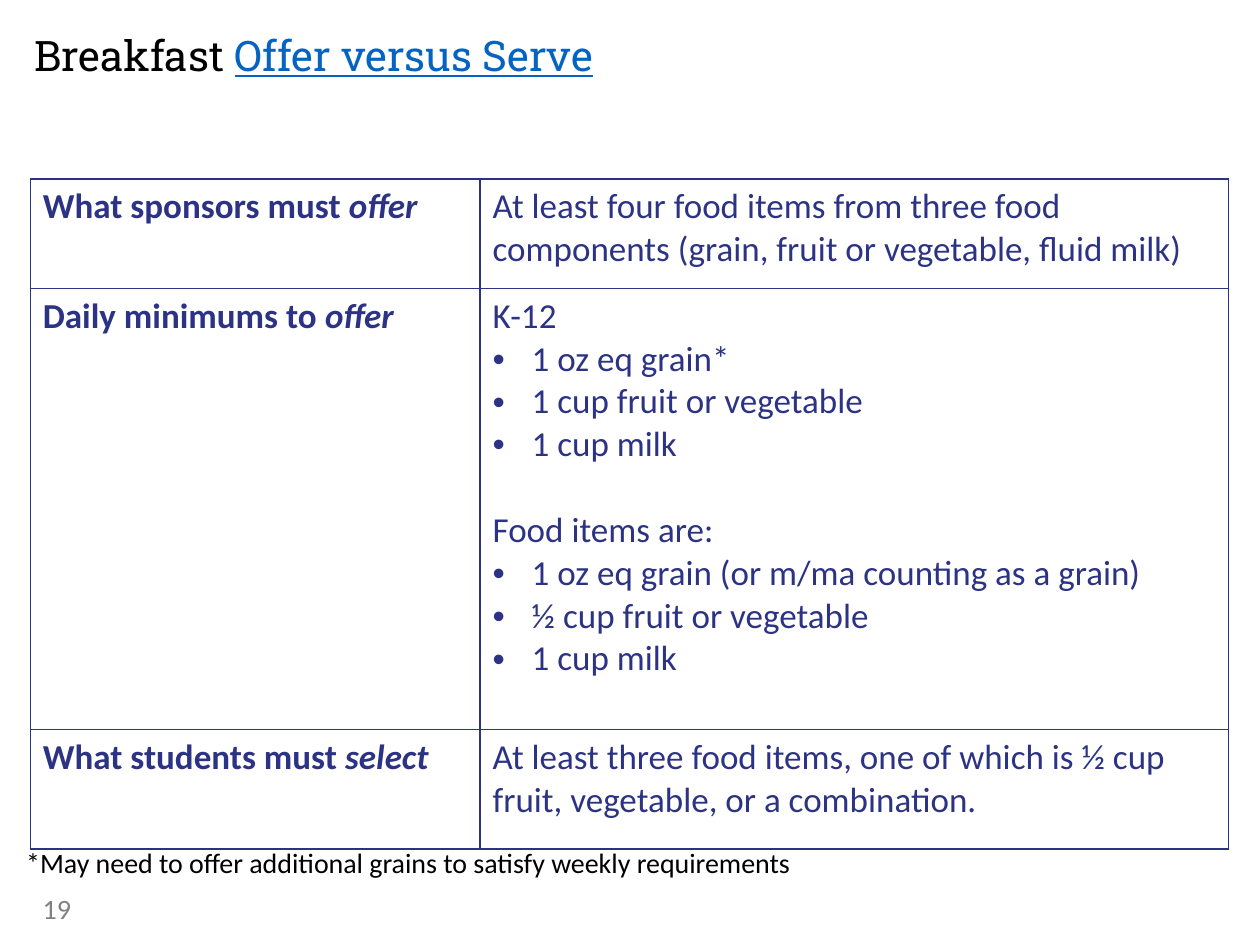
from lxml.etree import SubElement
from pptx import Presentation
from pptx.dml.color import RGBColor
from pptx.enum.text import MSO_ANCHOR, PP_ALIGN
from pptx.oxml.ns import qn
from pptx.util import Emu, Inches, Pt

NAVY = RGBColor(0x2C, 0x33, 0x84)
BLACK = RGBColor(0, 0, 0)
GRAY = RGBColor(0x80, 0x80, 0x80)
LINK_BLUE = RGBColor(0x05, 0x63, 0xC1)
WHITE = RGBColor(0xFF, 0xFF, 0xFF)

BODY_FONT = "Calibri"
TITLE_FONT = "Roboto Slab"
COLUMN_WIDTHS = (3.57, 5.94)
ROW_HEIGHTS = (0.87, 3.5, 0.95)
BULLET_INDENT = Inches(0.31)
SECTION_GAP = Pt(24.4)

LABELS = (
    ("What sponsors must ", "offer"),
    ("Daily minimums to ", "offer"),
    ("What students must ", "select"),
)
OFFER_RULE = ("At least four food items from three food components "
              "(grain, fruit or vegetable, fluid milk)")
SELECT_RULE = ("At least three food items, one of which is ½ cup fruit, "
               "vegetable, or a combination.")
MINIMUMS = (
    ("K-12", ("1 oz eq grain*", "1 cup fruit or vegetable", "1 cup milk")),
    ("Food items are:", ("1 oz eq grain (or m/ma counting as a grain)",
                         "½ cup fruit or vegetable", "1 cup milk")),
)


def add_text(paragraph, text, size=20, color=NAVY, name=BODY_FONT,
             bold=False, italic=False, underline=False):
    run = paragraph.add_run()
    run.text = text
    font = run.font
    font.size, font.name = Pt(size), name
    font.bold, font.italic, font.underline = bold, italic, underline
    font.color.rgb = color


def add_bullet(paragraph):
    properties = paragraph._p.get_or_add_pPr()
    properties.set("marL", str(BULLET_INDENT))
    properties.set("indent", str(-BULLET_INDENT))
    SubElement(properties, qn("a:buFont"), typeface="Arial")
    SubElement(properties, qn("a:buChar"), char="•")


def format_cell(cell):
    """Give the cell a thin navy border on all sides and a white fill."""
    properties = cell._tc.get_or_add_tcPr()
    for side in ("lnL", "lnR", "lnT", "lnB"):
        line = SubElement(properties, qn(f"a:{side}"), w=str(Pt(1)))
        fill = SubElement(line, qn("a:solidFill"))
        SubElement(fill, qn("a:srgbClr"), val=str(NAVY))
    cell.fill.solid()
    cell.fill.fore_color.rgb = WHITE


def add_title(slide):
    title = slide.shapes.title
    title.left, title.top = Inches(0.27), Inches(0.28)
    title.width, title.height = Inches(6.65), Inches(0.83)
    frame = title.text_frame
    frame.margin_left = frame.margin_right = Emu(0)
    frame.margin_top = frame.margin_bottom = Emu(0)
    frame.vertical_anchor = MSO_ANCHOR.TOP
    paragraph = frame.paragraphs[0]
    paragraph.alignment = PP_ALIGN.LEFT
    paragraph.line_spacing = 0.9
    add_text(paragraph, "Breakfast ", 24, BLACK, TITLE_FONT)
    add_text(paragraph, "Offer versus Serve", 24, LINK_BLUE, TITLE_FONT,
             underline=True)


def fill_minimums(frame):
    for index, (heading, items) in enumerate(MINIMUMS):
        paragraph = frame.add_paragraph() if index else frame.paragraphs[0]
        if index:
            paragraph.space_before = SECTION_GAP
        add_text(paragraph, heading)
        for item in items:
            paragraph = frame.add_paragraph()
            add_bullet(paragraph)
            add_text(paragraph, item)


def add_requirements_table(slide):
    table = slide.shapes.add_table(
        len(ROW_HEIGHTS), len(COLUMN_WIDTHS), Inches(0.24), Inches(1.42),
        Inches(sum(COLUMN_WIDTHS)), Inches(sum(ROW_HEIGHTS))).table
    table.first_row = table.horz_banding = False
    for column, width in zip(table.columns, COLUMN_WIDTHS):
        column.width = Inches(width)
    for row, height in zip(table.rows, ROW_HEIGHTS):
        row.height = Inches(height)
    for cell in table.iter_cells():
        format_cell(cell)
    for index, (lead, verb) in enumerate(LABELS):
        paragraph = table.cell(index, 0).text_frame.paragraphs[0]
        add_text(paragraph, lead, bold=True)
        add_text(paragraph, verb, bold=True, italic=True)
    for index, rule in ((0, OFFER_RULE), (2, SELECT_RULE)):
        add_text(table.cell(index, 1).text_frame.paragraphs[0], rule)
    fill_minimums(table.cell(1, 1).text_frame)


def add_note(slide, text, left, top, width, height, color):
    box = slide.shapes.add_textbox(*map(Inches, (left, top, width, height)))
    box.text_frame.word_wrap = True
    add_text(box.text_frame.paragraphs[0], text, 16, color)


def main():
    presentation = Presentation()
    presentation.slide_width = Inches(10)
    presentation.slide_height = Inches(7.5)
    slide = presentation.slides.add_slide(presentation.slide_layouts[5])
    add_title(slide)
    add_requirements_table(slide)
    add_note(slide, "19", 0.24, 7.03, 2.25, 0.4, GRAY)
    add_note(slide, "*May need to offer additional grains to satisfy weekly "
             "requirements", 0.11, 6.66, 8.07, 0.37, BLACK)
    presentation.save("out.pptx")


if __name__ == "__main__":
    main()
